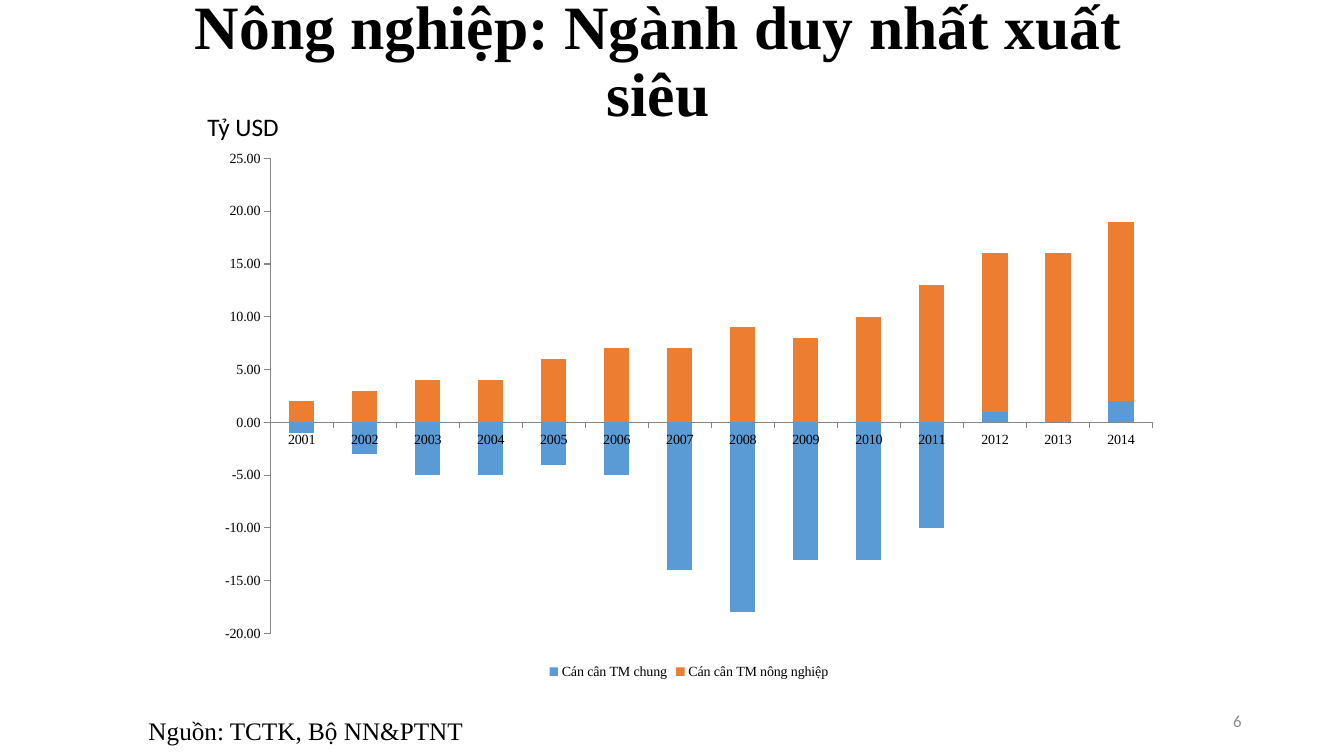
import dataclasses

import pptx
import pptx.chart.data
import pptx.dml.color
import pptx.enum.chart
import pptx.enum.text
import pptx.util

PX = 9525  # EMU per px, 96 px to the inch
BLACK = pptx.dml.color.RGBColor(0x00, 0x00, 0x00)
GREY = pptx.dml.color.RGBColor(0x8C, 0x8C, 0x8C)
AXIS_GREY = pptx.dml.color.RGBColor(0x86, 0x86, 0x86)
BLUE = pptx.dml.color.RGBColor(0x5B, 0x9B, 0xD5)
ORANGE = pptx.dml.color.RGBColor(0xED, 0x7D, 0x31)
SERIF = "Times New Roman"
SANS = "Calibri"
ALIGN = pptx.enum.text.PP_ALIGN
ANCHOR = pptx.enum.text.MSO_ANCHOR
TICK = pptx.enum.chart.XL_TICK_MARK


@dataclasses.dataclass(frozen=True)
class Box:
    left: int
    top: int
    width: int
    height: int

    def emu(self) -> list[int]:
        return [length * PX for length in dataclasses.astuple(self)]


@dataclasses.dataclass(frozen=True)
class Label:
    text: str
    box: Box
    size: int
    font: str = SERIF
    color: pptx.dml.color.RGBColor = BLACK
    bold: bool = False
    align: ALIGN = ALIGN.LEFT
    anchor: ANCHOR = ANCHOR.TOP
    spacing: float = 1.0


@dataclasses.dataclass(frozen=True)
class Balance:
    name: str
    color: pptx.dml.color.RGBColor
    values: tuple[int, ...]


HEADING = Label("Nông nghiệp: Ngành duy nhất xuất siêu", Box(120, 23, 1014, 74), 44,
                bold=True, align=ALIGN.CENTER, anchor=ANCHOR.MIDDLE, spacing=0.9)
LABELS = (
    Label("6", Box(904, 667, 288, 38), 12, SANS, GREY,
          align=ALIGN.RIGHT, anchor=ANCHOR.MIDDLE),
    Label("Nguồn: TCTK, Bộ NN&PTNT", Box(132, 677, 437, 35), 18),
    Label("Tỷ USD", Box(188, 101, 179, 38), 18, SANS),
)
YEARS = [str(year) for year in range(2001, 2015)]
BALANCES = (
    Balance("Cán cân TM chung", BLUE,
            (-1, -3, -5, -5, -4, -5, -14, -18, -13, -13, -10, 1, 0, 2)),
    Balance("Cán cân TM nông nghiệp", ORANGE,
            (2, 3, 4, 4, 6, 7, 7, 9, 8, 10, 13, 15, 16, 17)),
)
CHART_BOX = Box(196, 133, 920, 518)


def apply(target: object, formats: dict[str, object]) -> None:
    for attribute, value in formats.items():
        setattr(target, attribute, value)


def write_label(shape, label: Label) -> None:
    apply(shape, dict(zip(("left", "top", "width", "height"), label.box.emu())))
    frame = shape.text_frame
    apply(frame, {"text": label.text, "word_wrap": True,
                  "vertical_anchor": label.anchor,
                  "auto_size": pptx.enum.text.MSO_AUTO_SIZE.NONE})
    paragraph = frame.paragraphs[0]
    apply(paragraph, {"alignment": label.align, "line_spacing": label.spacing})
    font = paragraph.runs[0].font
    apply(font, {"name": label.font, "size": pptx.util.Pt(label.size),
                 "bold": label.bold})
    font.color.rgb = label.color


def add_balance_chart(slide) -> None:
    data = pptx.chart.data.CategoryChartData(number_format="0.00")
    data.categories = YEARS
    for balance in BALANCES:
        data.add_series(balance.name, balance.values)
    chart = slide.shapes.add_chart(
        pptx.enum.chart.XL_CHART_TYPE.COLUMN_STACKED, *CHART_BOX.emu(), data).chart
    apply(chart, {"has_title": False, "has_legend": True})
    apply(chart.font, {"name": SERIF, "size": pptx.util.Pt(10)})
    chart.font.color.rgb = BLACK
    apply(chart.legend, {"position": pptx.enum.chart.XL_LEGEND_POSITION.BOTTOM,
                         "include_in_layout": False})

    # Stacked columns
    plot = chart.plots[0]
    apply(plot, {"gap_width": 150, "overlap": 100, "vary_by_categories": False})
    for series, balance in zip(plot.series, BALANCES):
        series.invert_if_negative = False
        series.format.fill.solid()
        series.format.fill.fore_color.rgb = balance.color

    # Axes
    for axis in (chart.category_axis, chart.value_axis):
        apply(axis, {"has_major_gridlines": False, "major_tick_mark": TICK.OUTSIDE,
                     "minor_tick_mark": TICK.NONE})
        axis.format.line.color.rgb = AXIS_GREY
        axis.format.line.width = pptx.util.Pt(0.75)
    apply(chart.value_axis, {"minimum_scale": -20, "maximum_scale": 25, "major_unit": 5})
    apply(chart.value_axis.tick_labels,
          {"number_format": "0.00", "number_format_is_linked": False})


def main() -> None:
    deck = pptx.Presentation()
    apply(deck, {"slide_width": 1280 * PX, "slide_height": 720 * PX})
    slide = deck.slides.add_slide(deck.slide_layouts.get_by_name("Title Only"))

    # Title, chart, then the labels around it
    write_label(slide.shapes.title, HEADING)
    add_balance_chart(slide)
    for label in LABELS:
        write_label(slide.shapes.add_textbox(*label.box.emu()), label)
    deck.save("out.pptx")


if __name__ == "__main__":
    main()
